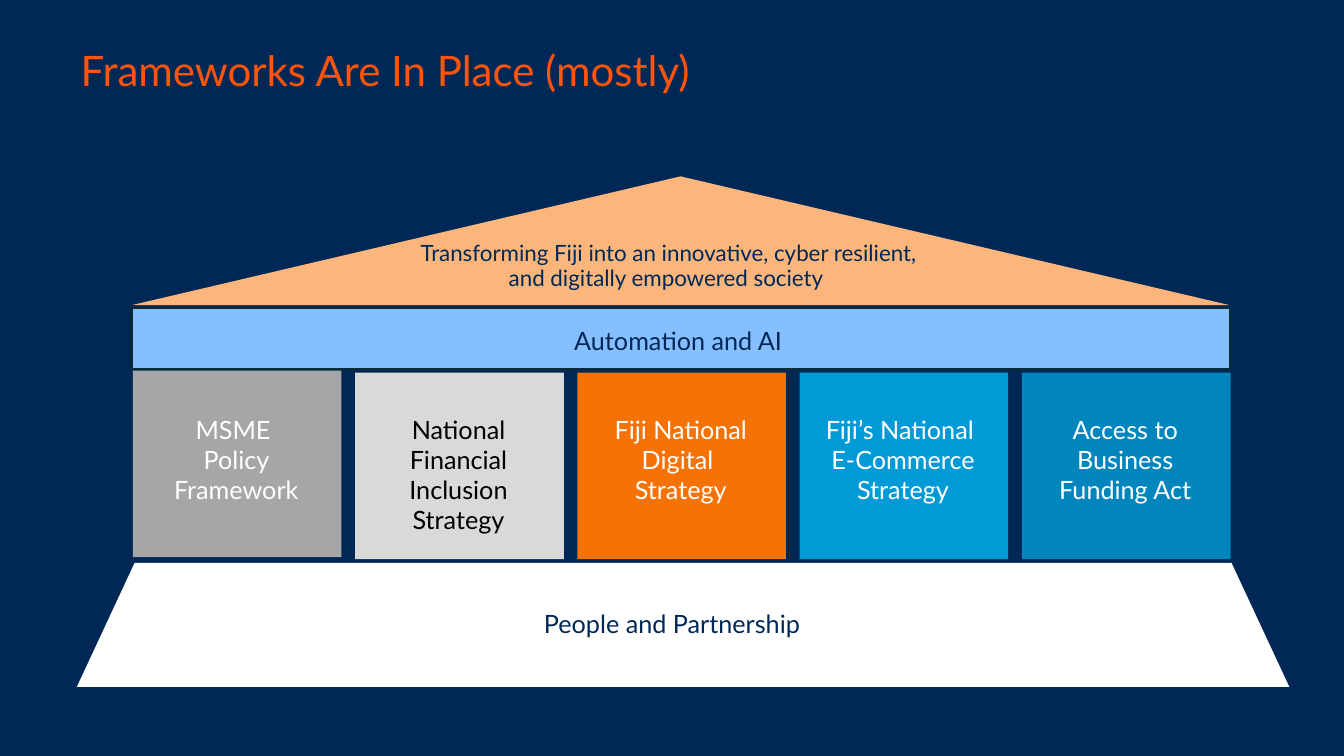
from pptx import Presentation
from pptx import util as u
from pptx.dml.color import RGBColor
from pptx.enum import shapes as es, text as et

NAVY, WHITE = "002856", "FFFFFF"
KIND = es.MSO_SHAPE


def hue(code):
    return RGBColor.from_string(code)


def place(item, box):
    names = ("left", "top", "width", "height")
    for name, size in zip(names, box):
        setattr(item, name, u.Pt(size))


def write(item, lines, size, color, align, pad, lead=None):
    """Fill a text frame, one paragraph per line."""
    frame = item.text_frame
    form = dict(word_wrap=True, auto_size=et.MSO_AUTO_SIZE.NONE,
                vertical_anchor=et.MSO_ANCHOR.TOP,
                margin_left=u.Pt(pad[0]), margin_right=u.Pt(pad[0]),
                margin_top=u.Pt(pad[1]), margin_bottom=u.Pt(pad[1]))
    for name, value in form.items():
        setattr(frame, name, value)
    for i, line in enumerate(lines):
        para = frame.add_paragraph() if i else frame.paragraphs[0]
        para.text = line
        para.alignment = align
        if lead:
            para.line_spacing = u.Pt(lead)
        for name, value in dict(name="Lato", size=u.Pt(size)).items():
            setattr(para.font, name, value)
        para.font.color.rgb = hue(color)


def block(slide, kind, box, fill, edge=None, adj=None):
    item = slide.shapes.add_shape(kind, *map(u.Pt, box))
    item.shadow.inherit = False
    item.fill.solid()
    item.fill.fore_color.rgb = hue(fill)
    if edge:
        item.line.color.rgb = hue(edge)
        item.line.width = u.Pt(1.5)
    else:
        item.line.fill.background()
    if adj is not None:
        item.adjustments[0] = adj


def label(slide, box, lines, size=18, color=NAVY, pad=(3.6, 2.2), lead=17.5):
    item = slide.shapes.add_textbox(*map(u.Pt, box))
    write(item, lines, size, color, et.PP_ALIGN.CENTER, pad, lead)


def head(slide, box, words):
    title = slide.shapes.title
    place(title, box)
    write(title, [words], 30, "FF540A", et.PP_ALIGN.LEFT, (7.2, 3.6))


def roof(slide, x, y, w, h):
    block(slide, KIND.ISOSCELES_TRIANGLE, (x, y, w, h), "FCB67C")
    label(slide, (x + 191.5, y + 44.6, 384.5, 40),
          ["Transforming Fiji into an innovative, cyber resilient, "
           "and digitally empowered society "], 16)


def beam(slide, x, y, w, h):
    block(slide, KIND.RECTANGLE, (x, y, w, h), "85BFFF", "092A39")
    label(slide, (x + 23, y + 13.7, 735, 22), ["Automation and AI"])


def walls(slide, x, y, w, h):
    """Five pillars, spread evenly over the width."""
    parts = [
        ("A6A6A6", WHITE, ["MSME ", "Policy Framework"]),
        ("D9D9D9", "000000", ["National Financial Inclusion Strategy"]),
        ("F57205", WHITE, ["Fiji National Digital ", "Strategy"]),
        ("009AD7", WHITE, ["Fiji’s National ", "E-Commerce Strategy"]),
        ("0086BC", WHITE, ["Access to Business Funding Act"]),
    ]
    wide = 149
    step = (w - wide) / (len(parts) - 1)
    for i, (fill, color, lines) in enumerate(parts):
        left = x + i * step
        rise = 0 if i else 1.4  # the first pillar sits a little higher
        block(slide, KIND.RECTANGLE, (left, y - rise, wide, h), fill)
        label(slide, (left - 0.7, y + 26, wide, h - 39), lines,
              color=color, pad=(7.2, 3.6), lead=None)


def base(slide, x, y, w, h):
    block(slide, KIND.TRAPEZOID, (x, y, w, h), WHITE, adj=0.466)
    label(slide, (x + 57.6, y + 34.5, 735, 22), ["People and Partnership"])


def main():
    deck = Presentation()
    deck.slide_width, deck.slide_height = u.Pt(960), u.Pt(540)
    slide = deck.slides.add_slide(deck.slide_layouts[5])
    slide.background.fill.solid()
    slide.background.fill.fore_color.rgb = hue(NAVY)

    # Title, then the house from top to bottom
    head(slide, (50.4, 28.1, 823, 44), "Frameworks Are In Place (mostly)")
    roof(slide, 93.9, 126, 784.5, 92)
    walls(slide, 95, 266.2, 784, 133.2)
    base(slide, 54.9, 402, 866, 88.6)
    beam(slide, 93.9, 220.3, 784.5, 43.2)
    deck.save("out.pptx")


if __name__ == "__main__":
    main()
